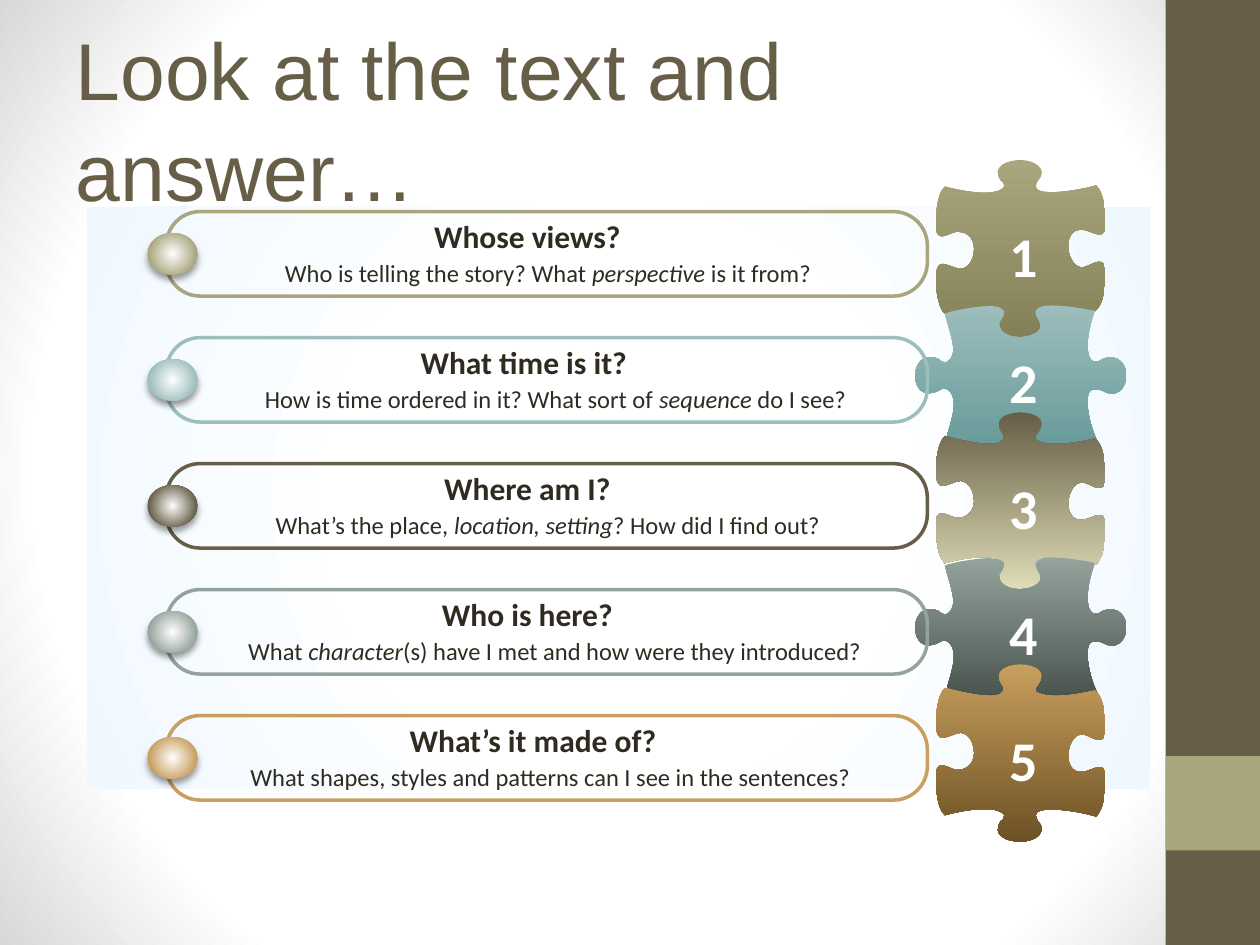
from dataclasses import dataclass

from lxml.etree import SubElement
from pptx import Presentation
from pptx.dml.color import RGBColor
from pptx.enum.shapes import MSO_SHAPE
from pptx.enum.text import MSO_ANCHOR, MSO_AUTO_SIZE, PP_ALIGN
from pptx.oxml.ns import qn
from pptx.util import Inches, Pt

WHITE = RGBColor(0xFF, 0xFF, 0xFF)
GREY = RGBColor(0xD8, 0xD8, 0xD8)
PALE_BLUE = RGBColor(0xEF, 0xF8, 0xFF)
INK = RGBColor(0x2F, 0x2B, 0x20)
BROWN = RGBColor(0x67, 0x5E, 0x47)
OLIVE = RGBColor(0xA9, 0xA5, 0x7C)
DARK_OLIVE = RGBColor(0x84, 0x80, 0x57)
TEAL = RGBColor(0x9C, 0xBE, 0xBD)
DARK_TEAL = RGBColor(0x67, 0x9B, 0x9A)
SAND = RGBColor(0xDF, 0xDC, 0xB7)
SAGE = RGBColor(0x95, 0xA3, 0x9D)
DARK_SAGE = RGBColor(0x48, 0x53, 0x4E)
GOLD = RGBColor(0xC8, 0x9F, 0x5D)
DARK_GOLD = RGBColor(0x6D, 0x51, 0x25)

ROW_TOP, ROW_PITCH = 1.68, 1.0
ROW_LEFT, ROW_W, ROW_H = 1.32, 6.04, 0.67
UNITS = 100  # outline units per inch

# Outlines: a start point, then three points for each Bezier curve
TABBED = [
    (68, 0), (79, 0), (90, 7), (82, 16), (81, 17), (80, 19), (80, 21),
    (80, 29), (111, 25), (128, 20), (135, 27), (136, 45), (135, 53),
    (136, 59), (132, 61), (123, 57), (97, 46), (104, 93), (121, 84),
    (126, 82), (135, 76), (135, 88), (136, 92), (135, 115), (127, 120),
    (118, 118), (92, 112), (80, 119), (79, 121), (80, 123), (82, 125),
    (97, 146), (39, 146), (53, 125), (56, 122), (55, 117), (48, 116),
    (40, 115), (27, 117), (8, 122), (2, 118), (0, 97), (1, 91),
    (2, 78), (8, 83), (18, 86), (32, 90), (39, 56), (17, 57),
    (11, 58), (3, 65), (1, 56), (0, 50), (1, 26), (8, 21),
    (34, 28), (52, 27), (55, 21), (55, 20), (55, 18), (52, 16),
    (45, 5), (57, 0), (68, 0)]
TABBED_FLIPPED = [(x, 141 - y) for x, y in TABBED]
EARED = [
    (167, 56), (167, 66), (159, 75), (148, 68), (146, 67), (144, 67), (141, 67),
    (132, 67), (137, 95), (144, 108), (136, 109), (115, 114), (106, 113),
    (100, 112), (91, 109), (97, 102), (111, 82), (59, 82), (67, 100),
    (71, 106), (75, 110), (61, 113), (54, 113), (33, 108), (24, 107),
    (26, 96), (36, 75), (25, 67), (23, 66), (21, 66), (18, 68),
    (-7, 81), (-7, 32), (18, 43), (21, 46), (24, 46), (25, 45),
    (35, 39), (26, 21), (23, 7), (31, 4), (49, 1), (58, 1),
    (75, 2), (70, 8), (66, 14), (65, 32), (106, 27), (98, 13),
    (96, 9), (91, 4), (101, 1), (110, -1), (135, 3), (142, 5),
    (134, 27), (135, 43), (141, 45), (143, 46), (145, 45), (148, 43),
    (160, 38), (167, 47), (167, 56)]


@dataclass
class Question:
    heading: str
    caption: list  # (text, italic) runs
    color: RGBColor
    dark: RGBColor
    outline: list
    piece_box: tuple  # left, top relative to the row, width and height in units
    heading_box: tuple = (3.09, 2.19)  # left, width
    caption_box: tuple = (1.59, 5.56)


TAB_BOX, EAR_BOX = (7.42, -0.41, 135, 141), (7.27, -0.26, 167, 113)
QUESTIONS = [
    Question("Whose views?",
             [("Who is telling the story? What ", False), ("perspective", True),
              (" is it from? ", False)],
             OLIVE, DARK_OLIVE, TABBED, TAB_BOX),
    Question("What time is it? ",
             [("How is time ordered in it? What sort of ", False),
              ("sequence", True), (" do I see? ", False)],
             TEAL, DARK_TEAL, EARED, EAR_BOX, caption_box=(1.59, 5.68)),
    Question("Where am I?",
             [("What’s the place", False), (", location, setting", True),
              ("? How did I find out? ", False)],
             BROWN, SAND, TABBED_FLIPPED, TAB_BOX),
    Question("Who is here?",
             [("What ", False), ("character", True),
              ("(s) have I met and how were they introduced? ", False)],
             SAGE, DARK_SAGE, EARED, EAR_BOX, caption_box=(1.26, 6.33)),
    Question("What’s it made of?",
             [("What shapes, styles and patterns can I see in the sentences?", False)],
             GOLD, DARK_GOLD, TABBED_FLIPPED, TAB_BOX, heading_box=(2.74, 2.98)),
]


def set_gradient(fill, element, stops, angle=None):
    """Linear gradient at an angle, or one from the centre without an angle."""
    fill.gradient()
    grad = element.find(".//" + qn("a:gradFill"))
    for child in list(grad):
        grad.remove(child)
    gs_list = SubElement(grad, qn("a:gsLst"))
    for pos, color in stops:
        gs = SubElement(gs_list, qn("a:gs"), pos=str(pos * 1000))
        SubElement(gs, qn("a:srgbClr"), val=str(color))
    if angle is None:
        circle = SubElement(grad, qn("a:path"), path="circle")
        SubElement(circle, qn("a:fillToRect"), l="50000", t="50000", r="50000", b="50000")
    else:
        SubElement(grad, qn("a:lin"), ang=str(angle * 60000), scaled="0")


def add_box(slide, kind, x, y, w, h, color=None):
    sp = slide.shapes.add_shape(kind, Inches(x), Inches(y), Inches(w), Inches(h))
    sp.shadow.inherit = False
    sp.line.fill.background()
    if color is None:
        sp.fill.background()
    else:
        sp.fill.solid()
        sp.fill.fore_color.rgb = color
    return sp


def add_text(slide, x, y, w, h, runs, size, color, bold=False):
    tf = slide.shapes.add_textbox(Inches(x), Inches(y), Inches(w), Inches(h)).text_frame
    tf.word_wrap = True
    p = tf.paragraphs[0]
    p.alignment = PP_ALIGN.CENTER
    for text, italic in runs:
        r = p.add_run()
        r.text = text
        r.font.name, r.font.size = "Calibri", Pt(size)
        r.font.bold, r.font.italic = bold, italic
        r.font.color.rgb = color


def curve_outline(sp, outline):
    """Give a freeform a Bezier outline within its box."""
    contour = sp.element.find(".//" + qn("a:path"))
    for child in list(contour):
        contour.remove(child)
    steps = [("a:moveTo", outline[:1])]
    steps += [("a:cubicBezTo", outline[i:i + 3]) for i in range(1, len(outline), 3)]
    for tag, points in steps:
        step = SubElement(contour, qn(tag))
        for x, y in points:
            SubElement(step, qn("a:pt"), x=str(x), y=str(y))
    SubElement(contour, qn("a:close"))


def add_piece(slide, question, y):
    left, offset, w, h = question.piece_box
    builder = slide.shapes.build_freeform(0, 0, scale=Inches(1) / UNITS)
    builder.add_line_segments([(w, 0), (w, h), (0, h)], close=True)
    sp = builder.convert_to_shape(Inches(left), Inches(y + offset))
    curve_outline(sp, question.outline)
    sp.shadow.inherit = False
    sp.line.fill.background()
    set_gradient(sp.fill, sp.element.spPr, [(0, question.color), (100, question.dark)], 90)


def add_question(slide, question, y):
    left, width = question.heading_box
    add_text(slide, left, y - 0.01, width, 0.4, [(question.heading, False)], 18, INK, True)
    # Rounded frame
    frame = add_box(slide, MSO_SHAPE.ROUNDED_RECTANGLE, ROW_LEFT, y, ROW_W, ROW_H)
    frame.adjustments[0] = 0.4
    frame.line.color.rgb = question.color
    frame.line.width = Pt(2)
    # Shaded bead with a soft shadow
    bead = add_box(slide, MSO_SHAPE.OVAL, ROW_LEFT - 0.15, y + 0.17, 0.4, 0.33)
    sp_pr = bead.element.spPr
    set_gradient(bead.fill, sp_pr, [(0, WHITE), (75, question.color), (100, question.color)])
    shadow = SubElement(sp_pr.find(qn("a:effectLst")), qn("a:outerShdw"),
                        blurRad=str(Pt(4)), dist=str(Pt(3)), dir="5400000", rotWithShape="0")
    black = SubElement(shadow, qn("a:srgbClr"), val="000000")
    SubElement(black, qn("a:alpha"), val="40000")
    left, width = question.caption_box
    add_text(slide, left, y + 0.32, width, 0.34, question.caption, 14, INK)


def add_backdrop(slide, w, h):
    set_gradient(slide.background.fill, slide.element, [(0, WHITE), (75, WHITE), (100, GREY)])
    bar = 0.075 * w
    add_box(slide, MSO_SHAPE.RECTANGLE, w - bar, 0, bar, h, BROWN)
    add_box(slide, MSO_SHAPE.RECTANGLE, w - bar, 0.8 * h, bar, bar, OLIVE)
    panel = add_box(slide, MSO_SHAPE.RECTANGLE, 0.69, 1.64, 8.44, 4.62)
    set_gradient(panel.fill, panel.element.spPr, [(0, WHITE), (43, WHITE), (100, PALE_BLUE)])


def format_title(title, x, y, w, h):
    title.left, title.top, title.width, title.height = map(Inches, (x, y, w, h))
    tf = title.text_frame
    tf.word_wrap, tf.auto_size = True, MSO_AUTO_SIZE.NONE
    tf.vertical_anchor = MSO_ANCHOR.MIDDLE
    p = tf.paragraphs[0]
    p.alignment, p.line_spacing = PP_ALIGN.LEFT, 1.05
    r = p.add_run()
    r.text = "Look at the text and answer…"
    r.font.name, r.font.size, r.font.color.rgb = "Arial", Pt(46), BROWN


def main():
    prs = Presentation()
    prs.slide_width, prs.slide_height = Inches(10), Inches(7.5)
    slide = prs.slides.add_slide(prs.slide_layouts[5])
    add_backdrop(slide, 10, 7.5)
    format_title(slide.shapes.title, 0.5, 0.3, 8.33, 1.25)
    rows = [(ROW_TOP + i * ROW_PITCH, q) for i, q in enumerate(QUESTIONS)]
    for y, question in rows:
        add_piece(slide, question, y)
    for number, (y, question) in enumerate(rows, 1):
        add_text(slide, 7.91, y + 0.03, 0.38, 0.52, [(str(number), False)], 32, WHITE, True)
        add_question(slide, question, y)
    prs.save("out.pptx")


if __name__ == "__main__":
    main()
